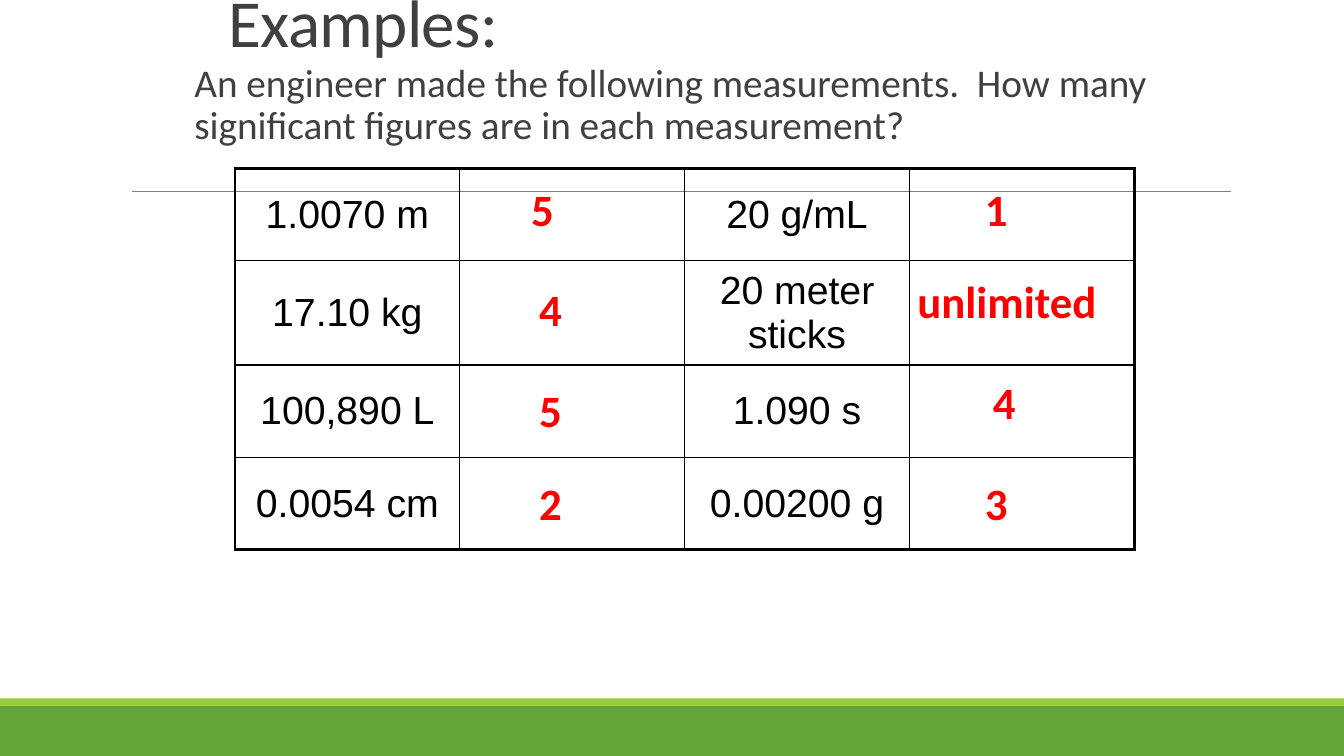
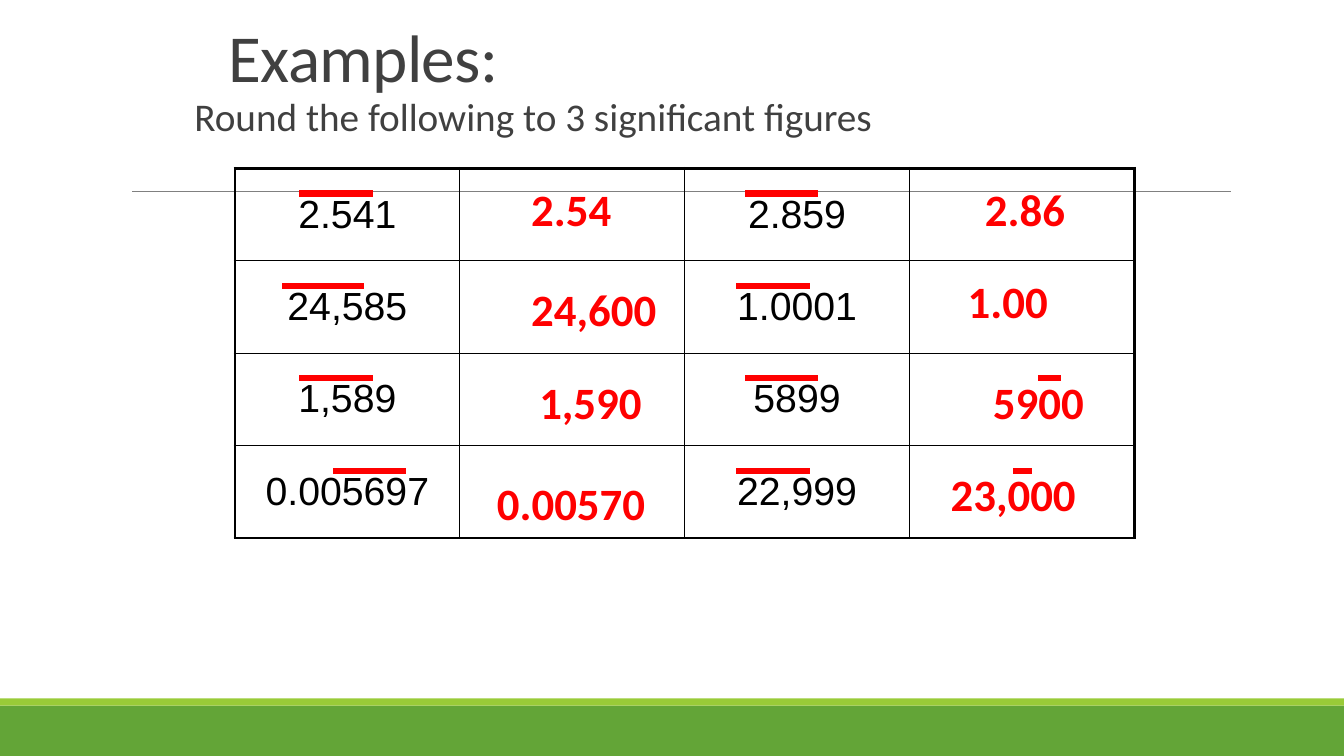
from pptx import Presentation
from pptx.dml.color import RGBColor
from pptx.enum.shapes import MSO_CONNECTOR, MSO_SHAPE
from pptx.enum.text import MSO_ANCHOR, MSO_AUTO_SIZE, PP_ALIGN
from pptx.oxml.ns import qn
from pptx.util import Inches, Pt
from lxml.etree import SubElement

COLORS = {
    "green": "63A537",
    "lime": "99CB38",
    "rule": "808080",
    "text": "404040",
    "answer": "FF0000",
    "black": "000000",
}
ROW_STEP = 2.75 / 3


def color(name):
    return RGBColor.from_string(COLORS[name])


class ExampleDeck:
    def __init__(self):
        self.presentation = Presentation()
        self.presentation.slide_width = Inches(13.33)
        self.presentation.slide_height = Inches(7.5)
        self.slide = None

    def new_slide(self, title, title_top, question):
        self.slide = self.presentation.slides.add_slide(self.presentation.slide_layouts[5])
        self.band(7, 0.5, "green")
        self.band(6.93, 0.07, "lime")
        self.line(1.31, 12.21, 1.9, "rule", 0.5)
        self.title(title, title_top)
        self.question(question, title_top + 0.75)

    def format_runs(self, paragraph, size, color_name, font="Calibri", bold=False):
        for run in paragraph.runs:
            run.font.name = font
            run.font.size = Pt(size)
            run.font.bold = bold
            run.font.color.rgb = color(color_name)

    def band(self, top, height, color_name):
        shape = self.slide.shapes.add_shape(
            MSO_SHAPE.RECTANGLE, 0, Inches(top), Inches(13.33), Inches(height))
        shape.shadow.inherit = False
        shape.fill.solid()
        shape.fill.fore_color.rgb = color(color_name)
        shape.line.fill.background()

    def line(self, start, end, top, color_name, width, cap="flat"):
        connector = self.slide.shapes.add_connector(
            MSO_CONNECTOR.STRAIGHT, Inches(start), Inches(top), Inches(end), Inches(top))
        connector.line.color.rgb = color(color_name)
        connector.line.width = Pt(width)
        connector.line._get_or_add_ln().set("cap", cap)
        SubElement(connector._element.spPr, qn("a:effectLst"))

    def title(self, text, top):
        shape = self.slide.shapes.title
        shape.left, shape.top = Inches(2.17), Inches(top)
        shape.width, shape.height = Inches(9), Inches(0.83)
        frame = shape.text_frame
        frame.text = text
        frame.auto_size = MSO_AUTO_SIZE.NONE
        frame.vertical_anchor = MSO_ANCHOR.BOTTOM
        paragraph = frame.paragraphs[0]
        paragraph.alignment = PP_ALIGN.LEFT
        paragraph.line_spacing = 0.85
        self.format_runs(paragraph, 48, "text")
        for run in paragraph.runs:
            run.font._element.set("spc", "-50")

    def text_box(self, left, top, width, height, text, size, color_name, bold=False):
        shape = self.slide.shapes.add_textbox(
            Inches(left), Inches(top), Inches(width), Inches(height))
        frame = shape.text_frame
        frame.word_wrap = True
        frame.text = text
        self.format_runs(frame.paragraphs[0], size, color_name, bold=bold)
        return frame

    def question(self, text, top):
        frame = self.text_box(1.83, top, 9.83, 4.95, text, 28, "text")
        frame.margin_left = Inches(0.1)
        frame.margin_right = 0
        paragraph = frame.paragraphs[0]
        paragraph.line_spacing = 0.9
        paragraph.space_before = Pt(12)
        paragraph.space_after = Pt(2)

    def answer(self, left, top, width, text):
        frame = self.text_box(left, top, width, 0.63, text, 32, "answer", bold=True)
        frame.auto_size = MSO_AUTO_SIZE.SHAPE_TO_FIT_TEXT

    def border(self, cell, side, width):
        properties = cell._tc.get_or_add_tcPr()
        line = SubElement(properties, qn(f"a:ln{side}"), w=str(Pt(width)))
        fill = SubElement(line, qn("a:solidFill"))
        SubElement(fill, qn("a:srgbClr"), val=COLORS["black"])

    def measurement_table(self, rows):
        row_count, column_count = len(rows), 4
        table = self.slide.shapes.add_table(
            row_count, column_count, Inches(2.33), Inches(1.67),
            Inches(8.92), Inches(ROW_STEP * row_count)).table
        table.first_row = False
        table.horz_banding = False
        for row, measurements in enumerate(rows):
            for column in range(column_count):
                cell = table.cell(row, column)
                outer_sides = {
                    "L": column == 0,
                    "R": column == column_count - 1,
                    "T": row == 0,
                    "B": row == row_count - 1,
                }
                for side, is_outer in outer_sides.items():
                    self.border(cell, side, 2.25 if is_outer else 1)
                cell.fill.background()
                cell.vertical_anchor = MSO_ANCHOR.MIDDLE
                if column % 2 == 0:
                    cell.text_frame.text = measurements[column // 2]
                    paragraph = cell.text_frame.paragraphs[0]
                    paragraph.alignment = PP_ALIGN.CENTER
                    self.format_runs(paragraph, 28, "black", "Arial")

    def example(self, title_top, question, measurements, answers):
        self.new_slide("Examples:", title_top, question)
        self.measurement_table(measurements)
        for answer in answers:
            self.answer(*answer)

    def overline(self, row, start, end):
        self.line(start, end, 1.92 + row * ROW_STEP, "answer", 4.5, "sq")


def main():
    deck = ExampleDeck()
    deck.example(
        -0.17,
        "An engineer made the following measurements.  How many significant figures "
        "are in each measurement?",
        [
            ("1.0070 m", "20 g/mL"),
            ("17.10 kg", "20 meter sticks"),
            ("100,890 L", "1.090 s"),
            ("0.0054 cm", "0.00200 g"),
        ],
        [
            (5.17, 1.75, 0.67, "5"),
            (5.25, 2.75, 0.67, "4"),
            (5.25, 3.75, 0.67, "5"),
            (5.25, 4.67, 0.67, "2"),
            (9.67, 1.75, 0.67, "1"),
            (9, 2.67, 2.33, "unlimited"),
            (9.75, 3.67, 0.67, "4"),
            (9.67, 4.67, 0.67, "3"),
        ])
    deck.example(
        0.17,
        "Round the following to 3 significant figures",
        [
            ("2.541", "2.859"),
            ("24,585", "1.0001"),
            ("1,589", "5899"),
            ("0.005697", "22,999"),
        ],
        [
            (5.17, 1.75, 1.42, "2.54"),
            (5.17, 2.75, 1.58, "24,600"),
            (5.25, 3.67, 1.42, "1,590"),
            (4.83, 4.67, 1.92, "0.00570"),
            (9.67, 1.75, 1.25, "2.86"),
            (9.5, 2.67, 1.5, "1.00"),
            (9.75, 3.67, 1.33, "5900"),
            (9.33, 4.58, 1.75, "23,000"),
        ])
    overlines = [
        [(3, 3.67), (7.42, 8.08)],
        [(2.83, 3.58), (7.33, 8)],
        [(3, 3.67), (7.42, 8.08), (10.33, 10.49)],
        [(3.33, 4), (7.33, 8), (10.08, 10.2)],
    ]
    for row, spans in enumerate(overlines):
        for start, end in spans:
            deck.overline(row, start, end)
    deck.presentation.save("out.pptx")


if __name__ == "__main__":
    main()
